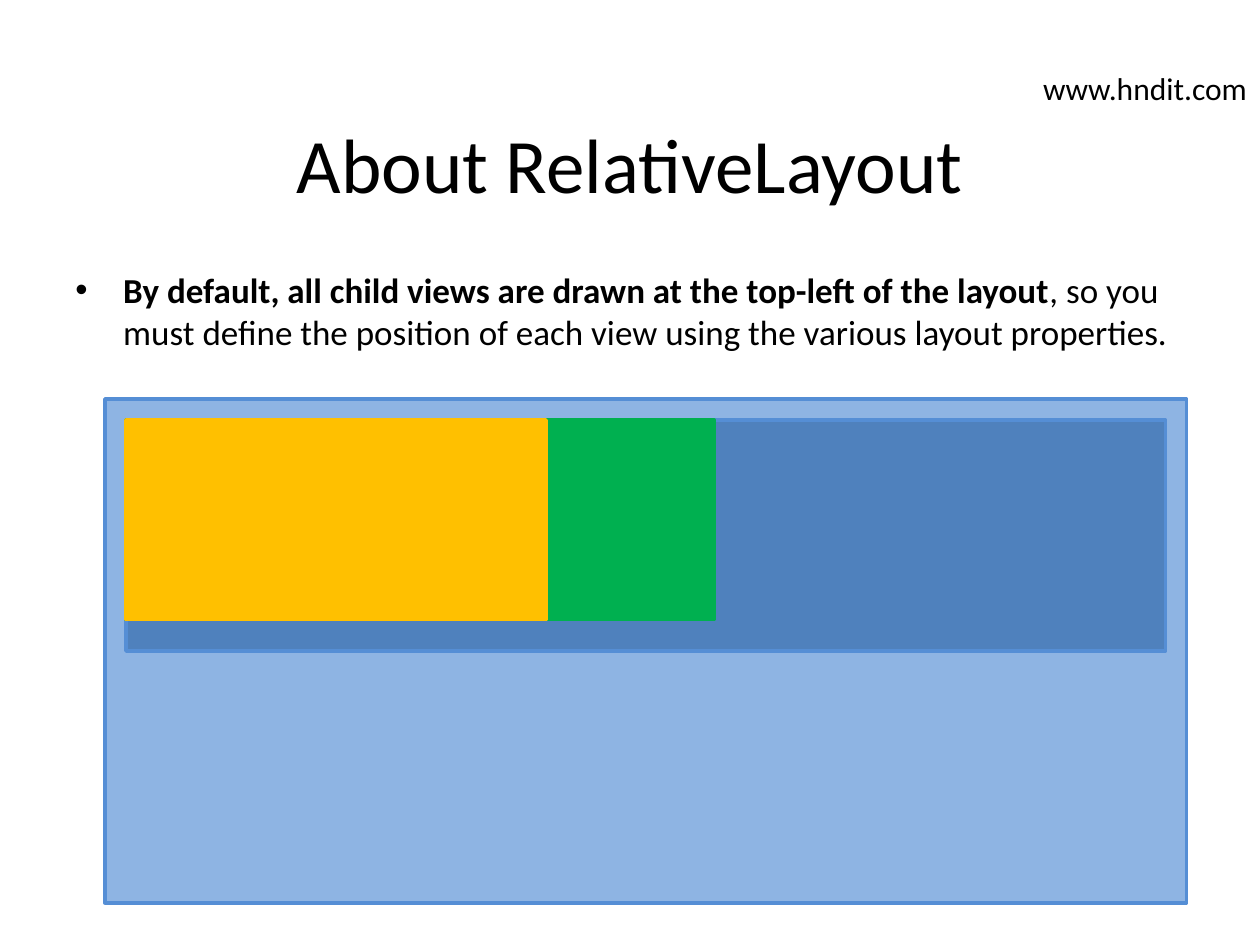
from dataclasses import dataclass

from lxml.etree import SubElement
from pptx import Presentation
from pptx.dml.color import RGBColor
from pptx.enum.shapes import MSO_SHAPE as Shape
from pptx.enum.text import MSO_ANCHOR as Anchor, MSO_AUTO_SIZE as AutoSize, PP_ALIGN as Align
from pptx.oxml.ns import qn
from pptx.util import Inches, Pt


@dataclass(frozen=True)
class Theme:
    font: str = "Calibri"
    text: str = "000000"
    layout_fill: str = "8EB4E3"
    row_fill: str = "4F81BD"
    outline: str = "558ED5"
    back_view: str = "00B050"
    front_view: str = "FFC000"
    title_size: int = 44
    body_size: int = 20
    address_size: int = 18
    line_width: int = 2


THEME = Theme()
COLUMNS, ROWS = 120, 90  # twelve grid cells to the inch
BULLET_INDENT = 0.38


def grid(*cells):
    return [Inches(cell / 12) for cell in cells]


def add_text(slide, cells, runs, size, align=Align.LEFT, anchor=Anchor.TOP, wrap=True, bullet=False):
    """Add one paragraph; runs are (text, bold) pairs."""
    frame = slide.shapes.add_textbox(*grid(*cells)).text_frame
    frame.word_wrap = wrap
    frame.vertical_anchor = anchor
    frame.auto_size = AutoSize.NONE if wrap else AutoSize.SHAPE_TO_FIT_TEXT
    paragraph = frame.paragraphs[0]
    paragraph.alignment = align
    if bullet:
        properties = paragraph._p.get_or_add_pPr()
        properties.set("marL", str(Inches(BULLET_INDENT)))
        properties.set("indent", str(-Inches(BULLET_INDENT)))
        SubElement(properties, qn("a:buFont"), typeface="Arial")
        SubElement(properties, qn("a:buChar"), char="•")
    font = paragraph.font
    font.name, font.size = THEME.font, Pt(size)
    font.color.rgb = RGBColor.from_string(THEME.text)
    for text, bold in runs:
        run = paragraph.add_run()
        run.text = text
        run.font.bold = bold


def add_view(slide, cells, fill, outline):
    shape = slide.shapes.add_shape(Shape.RECTANGLE, *grid(*cells))
    shape.shadow.inherit = False
    shape.fill.solid()
    shape.fill.fore_color.rgb = RGBColor.from_string(fill)
    shape.line.color.rgb = RGBColor.from_string(outline)
    shape.line.width = Pt(THEME.line_width)


def main():
    presentation = Presentation()
    presentation.slide_width, presentation.slide_height = grid(COLUMNS, ROWS)
    slide = presentation.slides.add_slide(presentation.slide_layouts[6])

    # Title and explanation
    add_text(slide, (6, 8, 108, 15), [("About RelativeLayout", False)],
             THEME.title_size, Align.CENTER, Anchor.MIDDLE)
    add_text(slide, (6, 25, 108, 55.5), [
        ("By default, all child views are drawn at the top-left of the layout", True),
        (", so you must define the position of each view using the various layout properties.", False),
    ], THEME.body_size, bullet=True)

    # Layout, with its child views stacked at one top-left corner
    add_view(slide, (10, 38, 103, 48), THEME.layout_fill, THEME.outline)
    children = [
        (99, 22, THEME.row_fill, THEME.outline),
        (56, 19, THEME.back_view, THEME.back_view),
        (40, 19, THEME.front_view, THEME.front_view),
    ]
    for width, height, fill, outline in children:
        add_view(slide, (12, 40, width, height), fill, outline)

    # Web address, flush with the right edge
    address_width = 21.84
    add_text(slide, (COLUMNS - address_width, 6, address_width, 4.8),
             [("www.hndit.com", False)], THEME.address_size, wrap=False)

    presentation.save("out.pptx")


if __name__ == "__main__":
    main()
